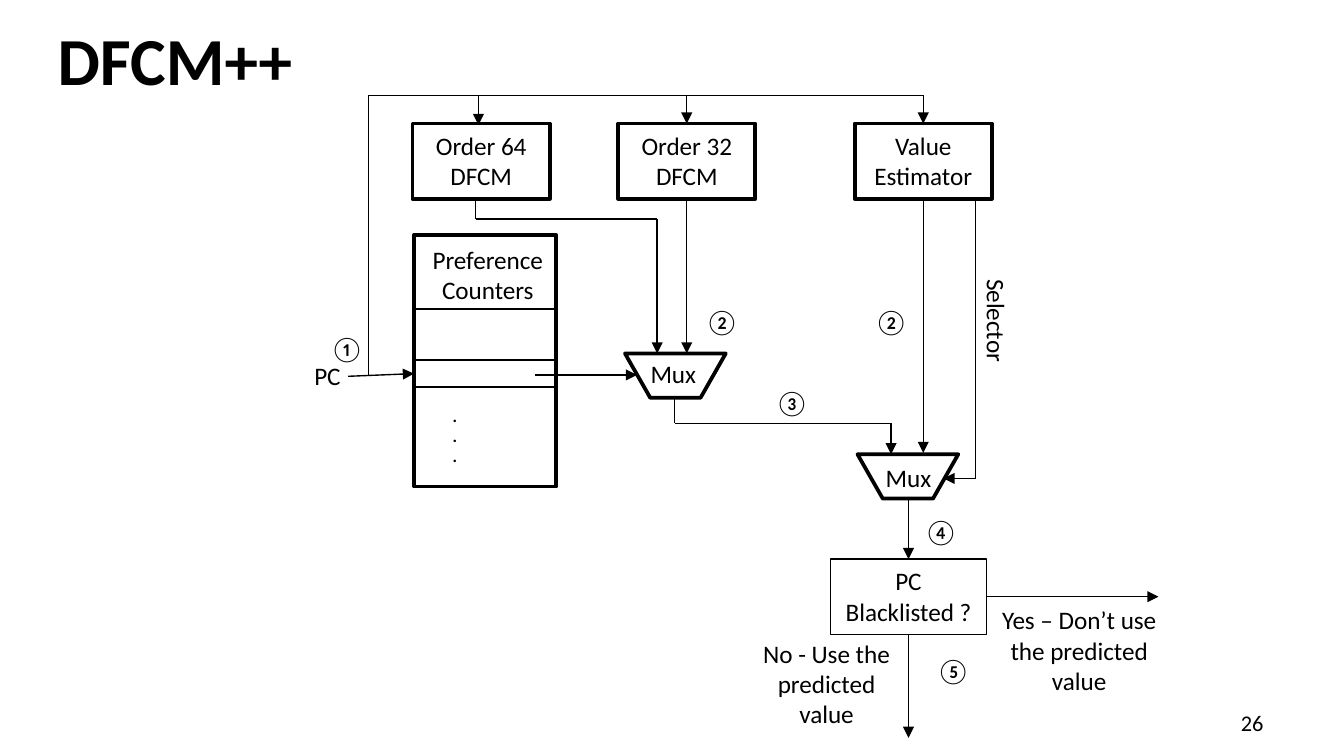
"""Build the DFCM++ value predictor diagram slide."""
from dataclasses import dataclass

from lxml import etree
from pptx import Presentation
from pptx.dml.color import RGBColor
from pptx.enum.shapes import MSO_CONNECTOR, MSO_SHAPE
from pptx.enum.text import MSO_ANCHOR, PP_ALIGN
from pptx.oxml.ns import qn
from pptx.util import Inches, Pt

RECTANGLE, TRAPEZOID = MSO_SHAPE.RECTANGLE, MSO_SHAPE.TRAPEZOID
STRAIGHT = MSO_CONNECTOR.STRAIGHT
LEFT, CENTER, RIGHT = PP_ALIGN.LEFT, PP_ALIGN.CENTER, PP_ALIGN.RIGHT
TOP, MIDDLE = MSO_ANCHOR.TOP, MSO_ANCHOR.MIDDLE
TOP_SITE, RIGHT_SITE, BOTTOM_SITE = 0, 3, 2


@dataclass(frozen=True)
class Theme:
    ink: RGBColor = RGBColor(0, 0, 0)
    paper: RGBColor = RGBColor(255, 255, 255)
    font: str = "Calibri"
    title: float = 36
    body: float = 13.5
    number: float = 12
    dots: float = 9
    thick: float = 2
    thin: float = 0.75


theme = Theme()


def write(shape, lines, size=theme.body, align=CENTER, anchor=TOP, wrap=True, bold=False):
    frame = shape.text_frame
    frame.word_wrap = wrap
    frame.vertical_anchor = anchor
    for index, line in enumerate(lines):
        para = frame.paragraphs[0] if index == 0 else frame.add_paragraph()
        para.alignment = align
        span = para.add_run()
        span.text = line
        span.font.name = theme.font
        span.font.size = Pt(size)
        span.font.bold = bold
        span.font.color.rgb = theme.ink


def outline(page, kind, place, weight):
    shape = page.shapes.add_shape(kind, *map(Inches, place))
    shape.shadow.inherit = False
    shape.fill.solid()
    shape.fill.fore_color.rgb = theme.paper
    shape.line.color.rgb = theme.ink
    shape.line.width = Pt(weight)
    return shape


deck = Presentation()
deck.slide_width = Inches(10)
deck.slide_height = deck.slide_width * 9 // 16
page = deck.slides.add_slide(deck.slide_layouts[6])

title = page.shapes.add_textbox(Inches(0.33), Inches(0.06), Inches(9.33), Inches(0.75))
write(title, ["DFCM++"], theme.title, LEFT, MIDDLE, bold=True)
number = page.shapes.add_textbox(Inches(7.17), Inches(5.25), Inches(2.33), Inches(0.26))
write(number, ["26"], theme.number, RIGHT, MIDDLE)

outline(page, RECTANGLE, (3.08, 1.75, 1.06, 1.87), theme.thick)

boxes = {}
for name, label, place, weight in (
    ("order 64", "Order 64 DFCM", (3.07, 0.92, 1.02, 0.56), theme.thick),
    ("order 32", "Order 32 DFCM", (4.6, 0.92, 1.02, 0.56), theme.thick),
    ("estimator", "Value Estimator", (6.36, 0.92, 1.02, 0.56), theme.thick),
    ("blacklist", "PC Blacklisted ?", (6.18, 4.16, 1.16, 0.56), theme.thin),
):
    boxes[name] = outline(page, RECTANGLE, place, weight)
    write(boxes[name], [label])

for place in ((4.65, 2.63, 0.75, 0.33), (6.38, 3.38, 0.75, 0.33)):
    mux = outline(page, TRAPEZOID, place, theme.thick)
    mux.rotation = 180
    mux.adjustments[0] = 0.57

for label, place, turn in (
    ("Preference Counters", (3.1, 1.77, 1.06, 0.56), 0),
    ("Mux", (4.71, 2.62, 0.6, 0.33), 0),
    ("Mux", (6.46, 3.39, 0.6, 0.33), 0),
    ("No - Use the predicted value", (5.55, 4.7, 1.2, 0.78), 0),
    ("Yes – Don’t use the predicted value", (7.35, 4.45, 1.36, 1.01), 0),
    ("Selector", (6.97, 2.22, 0.89, 0.33), 90),
):
    box = page.shapes.add_textbox(*map(Inches, place))
    box.rotation = turn
    write(box, [label])

for label, left, top, width in (
    ("PC", 2.24, 2.63, 0.4), ("①", 2.36, 2.43, 0.45), ("②", 5.15, 2.23, 0.45),
    ("②", 6.41, 2.23, 0.45), ("③", 5.67, 2.83, 0.45), ("④", 6.78, 3.79, 0.45),
    ("⑤", 6.87, 4.83, 0.45),
):
    box = page.shapes.add_textbox(Inches(left), Inches(top), Inches(width), Inches(0.33))
    write(box, [label], align=LEFT, wrap=False)

dots = page.shapes.add_textbox(Inches(3.27), Inches(2.97), Inches(0.2), Inches(0.56))
write(dots, ["."] * 3, theme.dots, LEFT, wrap=False, bold=True)

plain_paths = [[(3.08, y), (4.14, y)] for y in (2.3, 2.68, 2.88)]
arrow_paths = [
    [(2.59, 2.8), (3.08, 2.78)],
    [(3.98, 2.79), (4.74, 2.79)],
    [(3.54, 1.48), (3.54, 1.63), (4.89, 1.63), (4.89, 2.63)],
    [(5.02, 2.96), (5.02, 3.15), (6.63, 3.15), (6.63, 3.38)],
    [(7.26, 1.48), (7.26, 3.56), (7.02, 3.56)],
    [(6.76, 3.72), (6.76, 4.16)],
    [(5.11, 1.48), (5.11, 2.63)],
    [(6.87, 1.48), (6.87, 3.37)],
    [(6.76, 4.72), (6.76, 5.49)],
    [(7.34, 4.44), (8.62, 4.44)],
    [(2.74, 2.79), (2.74, 0.71), (6.87, 0.71), (6.87, 0.92)],
    [(3.56, 0.71), (3.56, 0.93)],
    [(5.11, 0.71), (5.11, 0.92)],
]
starts = {
    (5.11, 1.48): ("order 32", BOTTOM_SITE),
    (6.87, 1.48): ("estimator", BOTTOM_SITE),
    (6.76, 4.72): ("blacklist", BOTTOM_SITE),
    (7.34, 4.44): ("blacklist", RIGHT_SITE),
}
ends = {
    (5.11, 0.92): ("order 32", TOP_SITE),
    (6.87, 0.92): ("estimator", TOP_SITE),
    (6.76, 4.16): ("blacklist", TOP_SITE),
}
for points in plain_paths + arrow_paths:
    for start, end in zip(points, points[1:]):
        link = page.shapes.add_connector(STRAIGHT, *map(Inches, start + end))
        link.line.color.rgb = theme.ink
        link.line.width = Pt(theme.thin)
        if start in starts:
            name, site = starts[start]
            link.begin_connect(boxes[name], site)
        if end in ends:
            name, site = ends[end]
            link.end_connect(boxes[name], site)
        if points in arrow_paths and end == points[-1]:
            etree.SubElement(link.line._get_or_add_ln(), qn("a:tailEnd"), type="triangle")
        etree.SubElement(link._element.spPr, qn("a:effectLst"))

deck.save("out.pptx")
